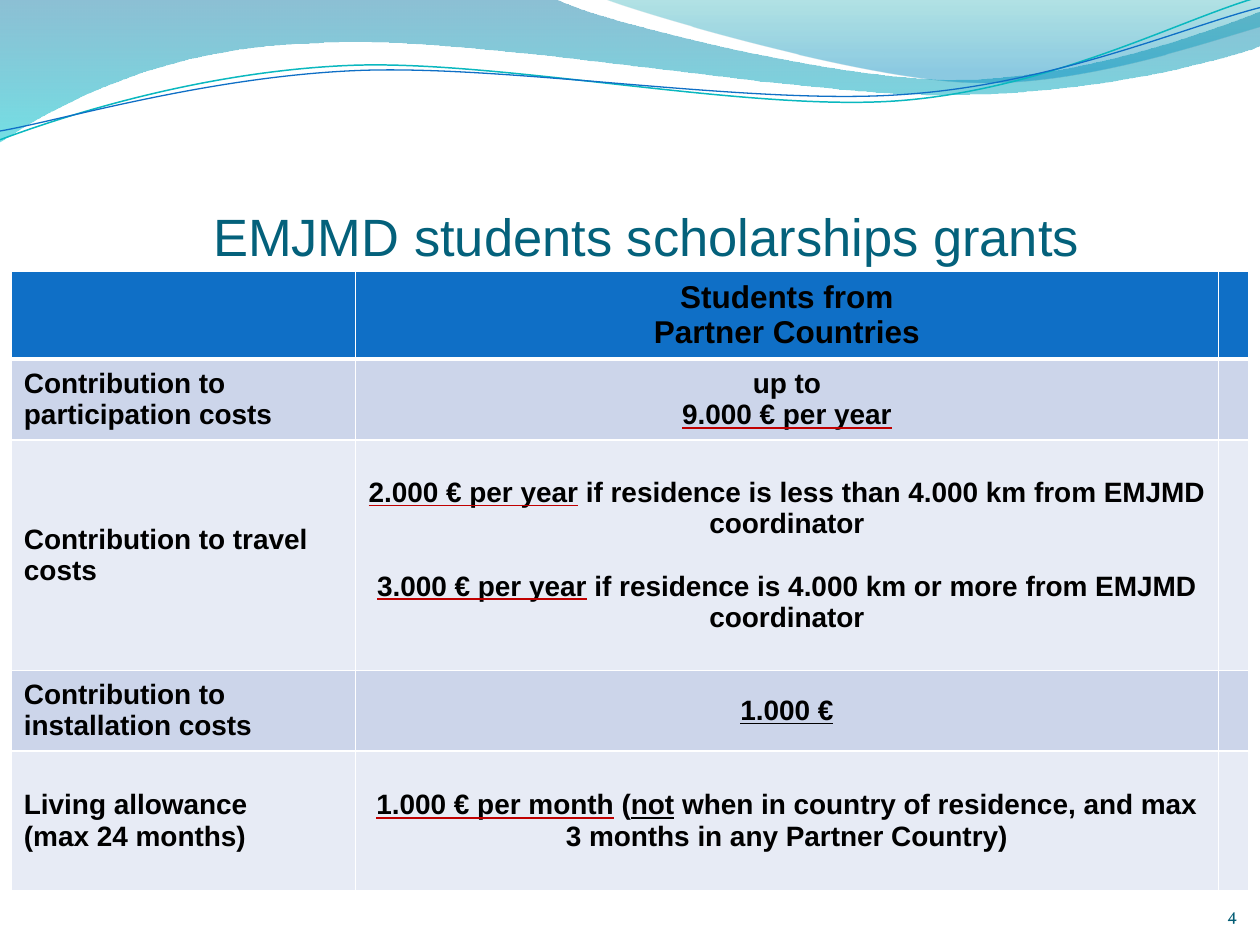
from math import cos, radians, sin

from lxml.etree import SubElement
from pptx import Presentation
from pptx.dml.color import RGBColor
from pptx.enum.text import MSO_ANCHOR, PP_ALIGN
from pptx.oxml.ns import qn
from pptx.util import Inches, Pt

WHITE = RGBColor(0xFF, 0xFF, 0xFF)
BLACK = RGBColor(0, 0, 0)
RED = RGBColor(0xC0, 0, 0)
TITLE_TEAL = RGBColor(0x04, 0x61, 0x7B)
NUMBER_TEAL = RGBColor(0x04, 0x5D, 0x75)
HEADER_BLUE = RGBColor(0x0F, 0x6F, 0xC6)
LINE_TEAL = RGBColor(0x0A, 0xB8, 0xBF)
BANDS = [RGBColor(0xE7, 0xEB, 0xF5), RGBColor(0xCC, 0xD5, 0xEA)]

TITLE = "EMJMD students scholarships grants"
PAGE_NUMBER = "4"

# Each cell is a list of paragraphs, each paragraph a list of (text, underline colour).
ROWS = [
    ([], [[("Students from", None)], [("Partner Countries", None)]]),
    ([[("Contribution to participation costs", None)]],
     [[("up to", None)], [("9.000 € per year", RED)]]),
    ([[("Contribution to travel costs", None)]],
     [[("2.000 € per year", RED),
       (" if residence is less than 4.000 km from EMJMD coordinator", None)],
      [("3.000 € per year", RED),
       (" if residence is 4.000 km or more from EMJMD coordinator", None)]]),
    ([[("Contribution to installation costs", None)]], [[("1.000 €", BLACK)]]),
    ([[("Living allowance", None)], [("(max 24 months)", None)]],
     [[("1.000 € per month", RED), (" (", None), ("not", BLACK),
       (" when in country of residence, and max 3 months in any Partner Country)",
        None)]]),
]
TRAVEL_ROW = 2
COLUMN_WIDTHS = [2.73, 6.85, 0.23]
ROW_HEIGHTS = [0.7, 0.64, 1.83, 0.64, 1.11]

# Outlines in page inches: a pair is a corner, six numbers are a Bézier curve.
# Gradient stops: position, colour, opacity in percent.
WAVES = [
    ((-0.01, -0.01, 10.02, 1.14),
     [(0, 0), (4.4, -0.01), (4.76, 0.17, 6.64, 0.63, 7.58, 0.63),
      (8.53, 0.63, 9.58, 0.26, 10, 0.09), (10.01, 0.36),
      (9.83, 0.44, 8.7, 0.76, 7.46, 0.75), (6.22, 0.75, 3.82, 0.28, 2.57, 0.34),
      (1.29, 0.36, 0.46, 0.83, -0.01, 1.13), (0, 0)],
     [(0, RGBColor(0, 0x74, 0xA1), 45), (1, RGBColor(0, 0xC6, 0xCF), 55)]),
    ((4.79, -0.01, 5.21, 0.7),
     [(4.79, -0.01), (5.09, 0.11, 6.82, 0.62, 7.69, 0.65),
      (8.56, 0.69, 9.61, 0.32, 10, 0.21), (10, 0), (4.79, -0.01)],
     [(0, RGBColor(0, 0xA1, 0xA9), 30), (0.8, RGBColor(0, 0x8B, 0xBF), 45)]),
]
STRAND_ROTATION = 357.3
STRANDS = [
    ((-0.02, 0.22, 10.02, 0.71),
     [(0, 1.11), (0.48, 0.93, 1.58, 0.57, 2.77, 0.52),
      (3.95, 0.47, 5.93, 0.89, 7.13, 0.8), (8.33, 0.71, 9.38, 0.15, 9.98, -0.02)],
     LINE_TEAL, 0.85),
    ((-0.02, 0.3, 10.03, 0.58),
     [(0, 1.04), (0.47, 0.96, 1.64, 0.61, 2.83, 0.56),
      (4.03, 0.51, 5.97, 0.84, 7.17, 0.75), (8.36, 0.67, 9.41, 0.21, 10, 0.06)],
     HEADER_BLUE, 0.75),
]


def add_outline(page, box, outline, rotation=0, close=False):
    """Add a freeform filling the box, with true curves, turned by rotation."""
    left, top, width, height = box
    builder = page.shapes.build_freeform(Inches(left), Inches(top))
    builder.add_line_segments([(Inches(left + width), Inches(top + height))], close=False)
    shape = builder.convert_to_shape()
    shape.shadow.inherit = False
    shape.rotation = rotation
    cosine, sine = cos(radians(-rotation)), sin(radians(-rotation))
    track = next(shape.element.iter(qn("a:path")))
    for step in list(track):
        track.remove(step)
    for index, part in enumerate(outline):
        kind = "moveTo" if index == 0 else "lnTo" if len(part) == 2 else "cubicBezTo"
        step = SubElement(track, qn("a:" + kind))
        for x, y in zip(part[::2], part[1::2]):
            across, down = x - left - width / 2, y - top - height / 2
            SubElement(step, qn("a:pt"),
                       x=str(Inches(across * cosine - down * sine + width / 2)),
                       y=str(Inches(across * sine + down * cosine + height / 2)))
    if close:
        SubElement(track, qn("a:close"))
    return shape


def add_wave(page, box, outline, stops):
    wave = add_outline(page, box, outline, close=True)
    wave.line.fill.background()
    wave.fill.gradient()
    wave.fill.gradient_angle = 270
    for stop, (position, color, _) in zip(wave.fill.gradient_stops, stops):
        stop.position = position
        stop.color.rgb = color
    for color, (_, _, opacity) in zip(wave.element.spPr.iter(qn("a:srgbClr")), stops):
        SubElement(color, qn("a:alpha"), val=str(opacity * 1000))


def add_strand(page, box, outline, color, width):
    strand = add_outline(page, box, outline, STRAND_ROTATION)
    strand.fill.background()
    strand.line.color.rgb = color
    strand.line.width = Pt(width)


def add_label(page, text, box, anchor, font, size, color):
    frame = page.shapes.add_textbox(*map(Inches, box)).text_frame
    frame.word_wrap = True
    frame.vertical_anchor = anchor
    frame.text = text
    para = frame.paragraphs[0]
    para.alignment = PP_ALIGN.CENTER
    span = para.runs[0]
    span.font.name, span.font.size = font, Pt(size)
    span.font.color.rgb = color
    return frame


def set_borders(cell, is_header):
    """White rules, thicker under the header row."""
    for side in ("lnL", "lnR", "lnT", "lnB"):
        width = 3 if is_header and side == "lnB" else 1
        line = SubElement(cell._tc.get_or_add_tcPr(), qn("a:" + side), w=str(Pt(width)))
        SubElement(SubElement(line, qn("a:solidFill")), qn("a:srgbClr"), val=str(WHITE))


def fill_cell(cell, paragraphs, size, alignment):
    frame = cell.text_frame
    for index, spans in enumerate(paragraphs):
        para = frame.add_paragraph() if index else frame.paragraphs[0]
        para.alignment = alignment
        for text, underline in spans:
            span = para.add_run()
            span.text = text
            font = span.font
            font.size, font.bold = Pt(size), True
            font.color.rgb = BLACK
            if underline is not None:
                font.underline = True
                rule = SubElement(span._r.get_or_add_rPr(), qn("a:uFill"))
                SubElement(SubElement(rule, qn("a:solidFill")), qn("a:srgbClr"),
                           val=str(underline))
            font.name = "Arial"


def add_grants_table(page):
    table = page.shapes.add_table(
        len(ROWS), len(COLUMN_WIDTHS), Inches(0.09), Inches(2.15),
        Inches(sum(COLUMN_WIDTHS)), Inches(sum(ROW_HEIGHTS))).table
    for column, width in zip(table.columns, COLUMN_WIDTHS):
        column.width = Inches(width)
    for row, (height, contents) in enumerate(zip(ROW_HEIGHTS, ROWS)):
        table.rows[row].height = Inches(height)
        for column in range(len(COLUMN_WIDTHS)):
            cell = table.cell(row, column)
            set_borders(cell, row == 0)
            cell.fill.solid()
            cell.fill.fore_color.rgb = BANDS[row % 2] if row else HEADER_BLUE
            cell.vertical_anchor = MSO_ANCHOR.MIDDLE
            if column < len(contents):
                fill_cell(cell, contents[column], 16 if row else 18,
                          PP_ALIGN.CENTER if column else PP_ALIGN.LEFT)
    table.cell(TRAVEL_ROW, 1).text_frame.paragraphs[1].space_before = Pt(18)


def main():
    deck = Presentation()
    deck.slide_width, deck.slide_height = Inches(10), Inches(7.5)
    page = deck.slides.add_slide(deck.slide_layouts[6])
    for wave in WAVES:
        add_wave(page, *wave)
    for strand in STRANDS:
        add_strand(page, *strand)
    title = add_label(page, TITLE, (0.63, 1.1, 9, 1.02), MSO_ANCHOR.BOTTOM,
                      "Arial", 30, TITLE_TEAL)
    title.margin_left = title.margin_right = title.margin_bottom = 0
    add_grants_table(page)
    add_label(page, PAGE_NUMBER, (9.55, 7.03, 0.46, 0.46), MSO_ANCHOR.MIDDLE,
              "Vollkorn", 10, NUMBER_TEAL)
    deck.save("out.pptx")


if __name__ == "__main__":
    main()
